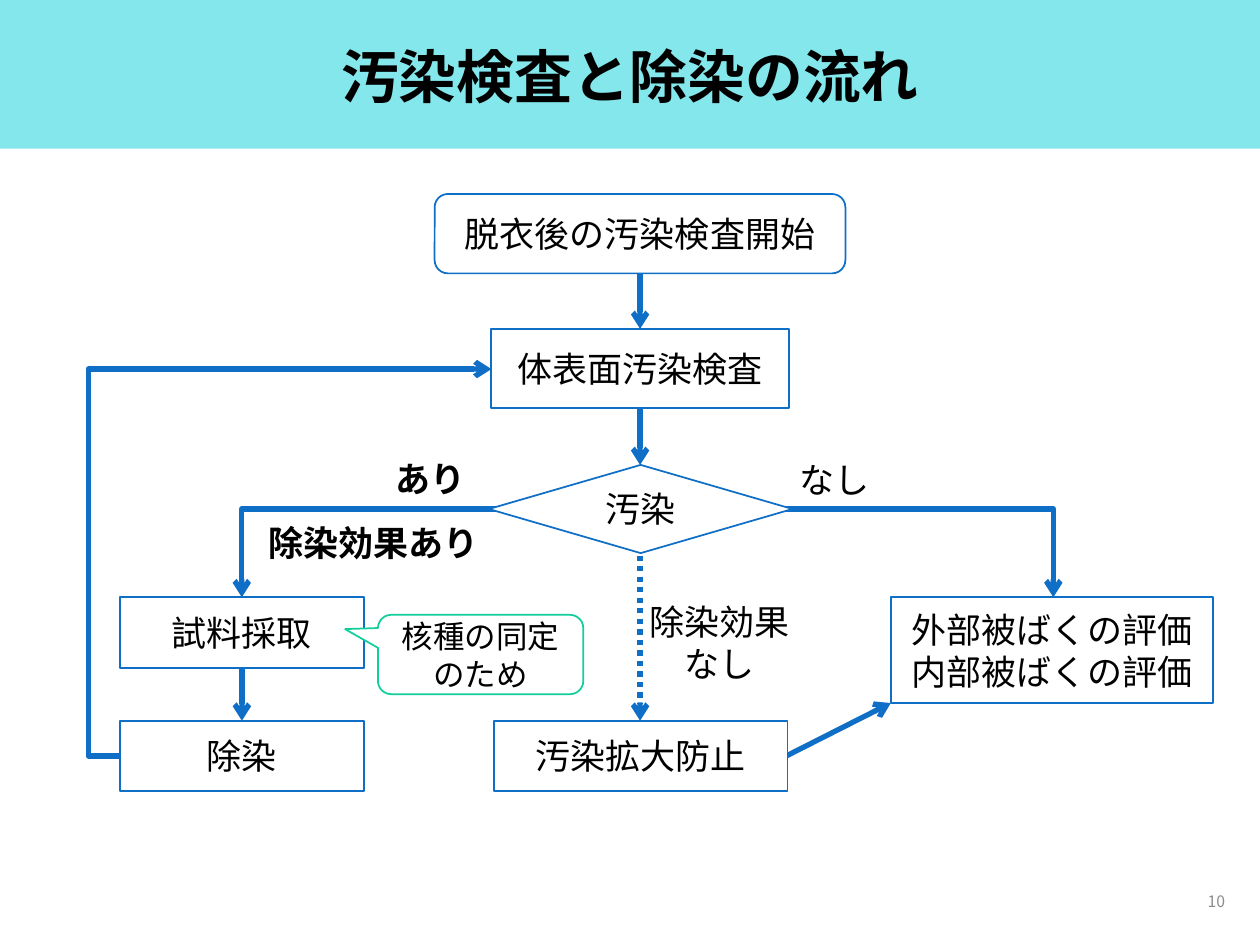
import pptx
import pptx.util
import pptx.oxml
import pptx.oxml.ns
from pptx.dml.color import RGBColor
from pptx.enum.dml import MSO_LINE
from pptx.enum.shapes import MSO_CONNECTOR, MSO_SHAPE
from pptx.enum.text import MSO_ANCHOR, PP_ALIGN
from pptx.util import Inches

BLUE = RGBColor(0x0F, 0x6F, 0xC6)
GREEN = RGBColor(0x10, 0xCF, 0x9B)
AQUA = RGBColor(0x0B, 0xD0, 0xD9)
WHITE = RGBColor(0xFF, 0xFF, 0xFF)
BLACK = RGBColor(0, 0, 0)
GRAY = RGBColor(0x8C, 0x8C, 0x8C)
SANS = "Arial"
NOTO = "Noto Sans CJK JP"

MID = 5.08     # centre line of the main flow
LEFT = 1.92    # centre line of the sampling branch
SPLIT = 4.04   # height of the decision's side exits


def add_node(parent, tag, **attrs):
    node = pptx.oxml.parse_xml(
        f'<a:{tag} xmlns:a="{pptx.oxml.ns.nsdecls("a").split(chr(34))[1]}"/>')
    for key, val in attrs.items():
        node.set(key, val)
    parent.append(node)


def write(shape, text, size=20, bold=False, font=SANS, color=BLACK,
          align=PP_ALIGN.CENTER, anchor=MSO_ANCHOR.MIDDLE):
    frame = shape.text_frame
    frame.text = text
    frame.word_wrap = True
    frame.vertical_anchor = anchor
    for para in frame.paragraphs:
        para.alignment = align
        para.font.size = pptx.util.Pt(size)
        para.font.bold = bold
        para.font.name = font
        para.font.color.rgb = color
    return frame


def add_box(slide, kind, box, text, size=20, edge=BLUE):
    shape = slide.shapes.add_shape(kind, *map(Inches, box))
    shape.shadow.inherit = False
    shape.fill.solid()
    shape.fill.fore_color.rgb = WHITE
    shape.line.color.rgb = edge
    shape.line.width = pptx.util.Pt(1)
    write(shape, text, size)
    return shape


def add_label(slide, box, text, bold=False):
    label = slide.shapes.add_textbox(*map(Inches, box))
    frame = write(label, text, bold=bold, anchor=MSO_ANCHOR.TOP)
    frame.margin_left = frame.margin_right = Inches(0.05)


def add_arrow(slide, start, end, kind=MSO_CONNECTOR.STRAIGHT, dash=None):
    arrow = slide.shapes.add_connector(kind, *map(Inches, start + end))
    arrow.line.color.rgb = BLUE
    arrow.line.width = pptx.util.Pt(3)
    if dash:
        arrow.line.dash_style = dash
    add_node(arrow.line._get_or_add_ln(), "tailEnd", type="arrow")
    add_node(arrow._element.spPr, "effectLst")
    return arrow


def add_elbow(slide, start, end, bend=None):
    """One corner, or two corners with the middle leg at the given share."""
    arrow = add_arrow(slide, start, end, MSO_CONNECTOR.ELBOW)
    geom = arrow._element.spPr.find(pptx.oxml.ns.qn("a:prstGeom"))
    if bend is None:
        geom.set("prst", "bentConnector2")
        return
    for old in list(geom):
        geom.remove(old)
    add_node(geom, "avLst")
    add_node(geom[0], "gd", name="adj1", fmla=f"val {round(bend * 100000)}")


def add_head(slide):
    band = slide.shapes.add_shape(
        MSO_SHAPE.RECTANGLE, 0, 0, Inches(10), Inches(1.18))
    band.shadow.inherit = False
    band.line.fill.background()
    band.fill.solid()
    band.fill.fore_color.rgb = AQUA
    tint = band._element.spPr.find(".//" + pptx.oxml.ns.qn("a:srgbClr"))
    add_node(tint, "alpha", val="50000")
    # The band goes behind the title
    slide.shapes._spTree.insert(2, band._element)

    title = slide.shapes.title
    title.left, title.top = Inches(0.69), Inches(0.21)
    title.width, title.height = Inches(8.62), Inches(0.85)
    frame = write(title, "汚染検査と除染の流れ", 33, True, NOTO)
    frame.paragraphs[0].line_spacing = 0.9


def main():
    deck = pptx.Presentation()
    deck.slide_width, deck.slide_height = Inches(10), Inches(7.5)
    slide = deck.slides.add_slide(deck.slide_layouts[5])
    add_head(slide)

    # Straight arrows
    for x, top, low in ((MID, 2.17, 2.61), (MID, 3.24, 3.69),
                        (LEFT, 5.3, 5.72)):
        add_arrow(slide, (x, top), (x, low))
    add_arrow(slide, (MID, 4.41), (MID, 5.72), dash=MSO_LINE.ROUND_DOT)
    add_arrow(slide, (6.24, 6), (7.07, 5.58))

    # Branches and the loop back to the survey
    add_elbow(slide, (4.08, SPLIT), (LEFT, 4.74))
    add_elbow(slide, (6.05, SPLIT), (8.36, 4.74))
    add_elbow(slide, (0.95, 6), (3.9, 2.93), bend=-0.085)

    # Steps
    step = MSO_SHAPE.FLOWCHART_PROCESS
    for kind, box, text in (
        (MSO_SHAPE.FLOWCHART_ALTERNATE_PROCESS, (3.45, 1.54, 3.26, 0.63),
         "脱衣後の汚染検査開始"),
        (step, (3.9, 2.61, 2.36, 0.63), "体表面汚染検査"),
        (MSO_SHAPE.FLOWCHART_DECISION, (3.88, 3.69, 2.41, 0.7), "汚染"),
        (step, (0.95, 4.74, 1.94, 0.56), "試料採取"),
        (step, (0.95, 5.72, 1.94, 0.56), "除染"),
        (step, (3.92, 5.72, 2.33, 0.56), "汚染拡大防止"),
        (step, (7.07, 4.74, 2.56, 0.84),
         "外部被ばくの評価\n内部被ばくの評価"),
    ):
        add_box(slide, kind, box, text)

    # Reason for sampling
    note = add_box(slide, MSO_SHAPE.ROUNDED_RECTANGULAR_CALLOUT,
                   (3, 4.88, 1.63, 0.63), "核種の同定のため", 18, GREEN)
    note.adjustments[0] = -0.66
    note.adjustments[1] = -0.32

    # Branch labels
    add_label(slide, (3.04, 3.58, 0.76, 0.44), "あり", True)
    add_label(slide, (2.03, 4.09, 1.87, 0.44), "除染効果あり", True)
    add_label(slide, (6.24, 3.59, 0.76, 0.44), "なし")
    add_label(slide, (5.05, 4.72, 1.32, 0.77), "除染効果なし")

    # Page number
    page = slide.shapes.add_textbox(*map(Inches, (7.57, 6.95, 2.25, 0.4)))
    write(page, "10", 9, font=NOTO, color=GRAY, align=PP_ALIGN.RIGHT)

    deck.save("out.pptx")


if __name__ == "__main__":
    main()
